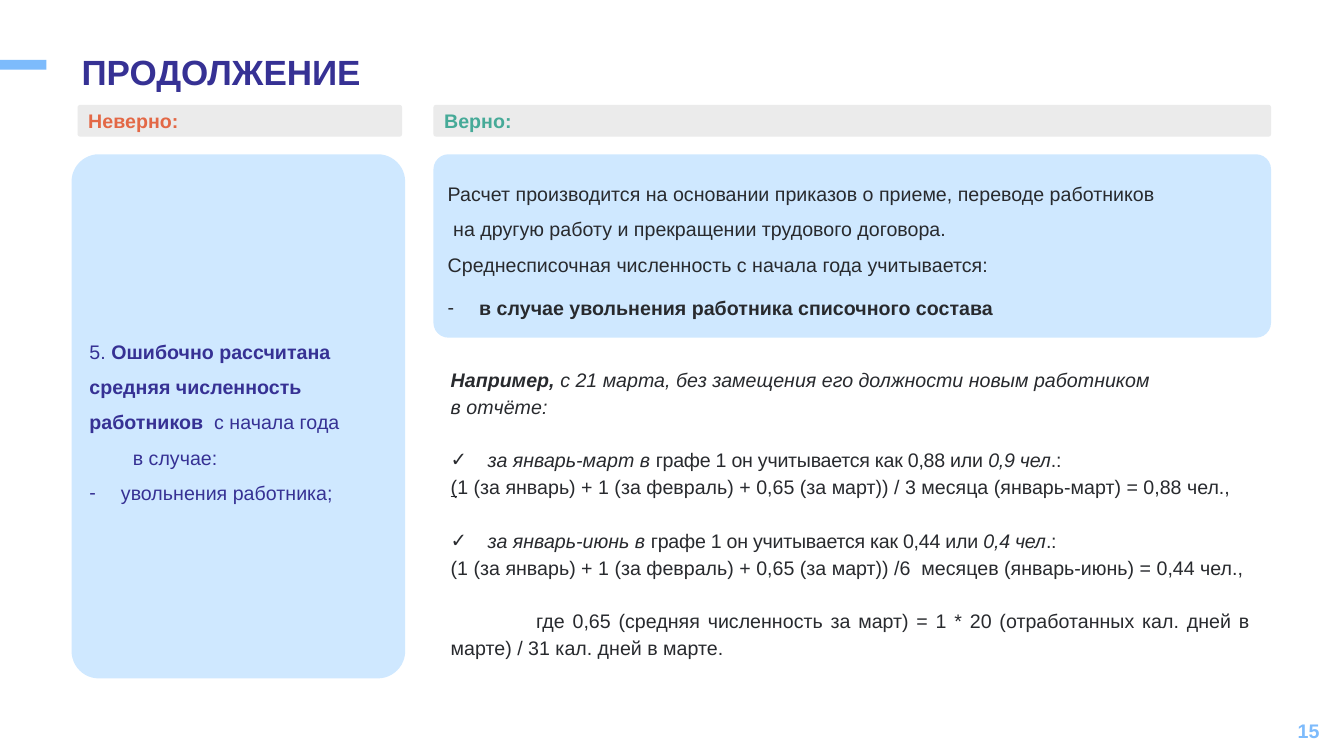
from lxml import etree
from pptx import Presentation
from pptx import util as u
from pptx.dml.color import RGBColor
from pptx.enum import shapes, text
from pptx.oxml import ns

COLORS = {"sky": "7DBBFC", "pale": "CFE8FF", "grey": "EBEBEB", "indigo": "363194",
          "ink": "282A2E", "orange": "E36846", "green": "46AA98"}
FONT = "Arial"
LEFT, TOP = text.PP_ALIGN.LEFT, text.MSO_ANCHOR.TOP
RIGHT, JUSTIFY = text.PP_ALIGN.RIGHT, text.PP_ALIGN.JUSTIFY
MIDDLE = text.MSO_ANCHOR.MIDDLE
ROUND = shapes.MSO_SHAPE.ROUNDED_RECTANGLE
BULLET_INDENT = 22.5
CHECK_INDENT = 26.4

TITLE = [{"runs": [("ПРОДОЛЖЕНИЕ", "b")]}]
PAGE_NUMBER = [{"runs": [("15", "b")], "align": RIGHT}]
WRONG_HEADING = [{"runs": [("Неверно:", "b")]}]
RIGHT_HEADING = [{"runs": [("Верно:", "b")]}]

MISTAKE = [
    {"runs": [("5. ", ""), ("Ошибочно рассчитана средняя численность работников  ", "b"),
              ("с начала года", "")]},
    {"runs": [("в случае:", "")], "left": 31},
    {"runs": [("увольнения работника;", "")], "bullet": "-", "left": BULLET_INDENT},
]

RULE = [
    {"runs": [("Расчет производится на основании приказов о приеме, переводе работников", "")],
     "after": 6},
    {"runs": [("на другую работу и прекращении трудового договора.", "")], "left": 3.9, "after": 6},
    {"runs": [("Среднесписочная численность с начала года учитывается:", "")]},
    {"runs": [("в случае увольнения работника списочного состава", "b")],
     "bullet": "-", "left": BULLET_INDENT, "before": 11.8},
]

PERIODS = [
    ("за январь-март в ", "0,88", "0,9 чел",
     [("(", "u"), ("1 (за январь) + 1 (за февраль) + 0,65 (за март)) / 3 месяца "
                   "(январь-март) = 0,88 чел.,", "")]),
    ("за январь-июнь в ", "0,44", "0,4 чел",
     [("(1 (за январь) + 1 (за февраль) + 0,65 (за март)) /6  месяцев "
       "(январь-июнь) = 0,44 чел.,", "")]),
]

EXAMPLE = [
    {"runs": [("Например,", "bi"),
              (" с 21 марта, без замещения его должности новым работником", "i")]},
    {"runs": [("в отчёте:", "i")]},
]
for period, value, rounded, formula in PERIODS:
    EXAMPLE += [
        {"runs": [(period, "i"), (f"графе 1 он учитывается как {value} или ", "t"),
                  (rounded, "it"), (".:", "t")],
         "bullet": "✓", "left": CHECK_INDENT, "before": 19.2},
        {"runs": formula},
    ]
EXAMPLE.append({
    "runs": [("где 0,65 (средняя численность за март) = 1 * 20 (отработанных кал. дней в марте) "
              "/ 31 кал. дней в марте.", "")],
    "first": 61, "before": 19.2, "align": JUSTIFY})


def color(name):
    return RGBColor.from_string(COLORS[name])


def add_block(page, kind, frame, fill):
    box = page.shapes.add_shape(kind, *[u.Pt(length) for length in frame])
    box.shadow.inherit = False
    box.line.fill.background()
    box.fill.solid()
    box.fill.fore_color.rgb = color(fill)
    if kind == ROUND:
        box.adjustments[0] = 0.082
    return box


def add_textbox(page, frame):
    return page.shapes.add_textbox(*[u.Pt(length) for length in frame])


def write(box, paragraphs, ink, size=14, spacing=1.0, anchor=MIDDLE, margins=(7.2, 3.6)):
    frame = box.text_frame
    frame.word_wrap = True
    frame.vertical_anchor = anchor
    frame.margin_left = frame.margin_right = u.Pt(margins[0])
    frame.margin_top = frame.margin_bottom = u.Pt(margins[1])
    for index, item in enumerate(paragraphs):
        para = frame.paragraphs[0] if index == 0 else frame.add_paragraph()
        para.alignment = item.get("align", LEFT)
        para.line_spacing = spacing
        para.space_before = u.Pt(item.get("before", 0))
        para.space_after = u.Pt(item.get("after", 0))
        left = item.get("left", 0)
        bullet = item.get("bullet")
        first = -left if bullet else item.get("first", 0)
        properties = para._p.get_or_add_pPr()
        properties.set("marL", str(int(u.Pt(left))))
        properties.set("indent", str(int(u.Pt(first))))
        if bullet:
            etree.SubElement(properties, ns.qn("a:buFont")).set("typeface", FONT)
            etree.SubElement(properties, ns.qn("a:buChar")).set("char", bullet)
        for words, style in item["runs"]:
            span = para.add_run()
            span.text = words
            span.font.name = FONT
            span.font.size = u.Pt(size)
            span.font.color.rgb = color(ink)
            span.font.bold = "b" in style
            span.font.italic = "i" in style
            span.font.underline = "u" in style
            if "t" in style:
                span._r.get_or_add_rPr().set("spc", "-20")


def main():
    deck = Presentation()
    deck.slide_width, deck.slide_height = u.Pt(960), u.Pt(540)
    page = deck.slides.add_slide(deck.slide_layouts[6])

    right_x, right_width = 309.6, 598.3
    heading_y, panel_y = 74.9, 110.2

    add_block(page, shapes.MSO_SHAPE.RECTANGLE, (0, 42.7, 33.1, 7), "sky")
    write(add_textbox(page, (50.4, 35.5, 645, 41)), TITLE, "indigo", 25, 0.9, TOP, (7.9, 4.3))
    write(add_textbox(page, (734.4, 507.6, 216, 28.8)), PAGE_NUMBER, "sky", margins=(7.9, 4.3))

    headings = [(55.4, 231.8, WRONG_HEADING, "orange"),
                (right_x, right_width, RIGHT_HEADING, "green")]
    for x, width, heading, ink in headings:
        write(add_block(page, ROUND, (x, heading_y, width, 22.7), "grey"), heading, ink)

    mistake = add_block(page, ROUND, (51.1, panel_y, 238.3, 374.4), "pale")
    write(mistake, MISTAKE, "indigo", spacing=u.Pt(25.1))
    rule = add_block(page, ROUND, (right_x, panel_y, right_width, 131), "pale")
    write(rule, RULE, "ink", spacing=u.Pt(19.1), anchor=TOP, margins=(7.2, 14.5))
    example = add_textbox(page, (322, 260.2, 571, 211))
    write(example, EXAMPLE, "ink", spacing=u.Pt(19.2), anchor=TOP, margins=(0, 0))

    deck.save("out.pptx")


if __name__ == "__main__":
    main()
